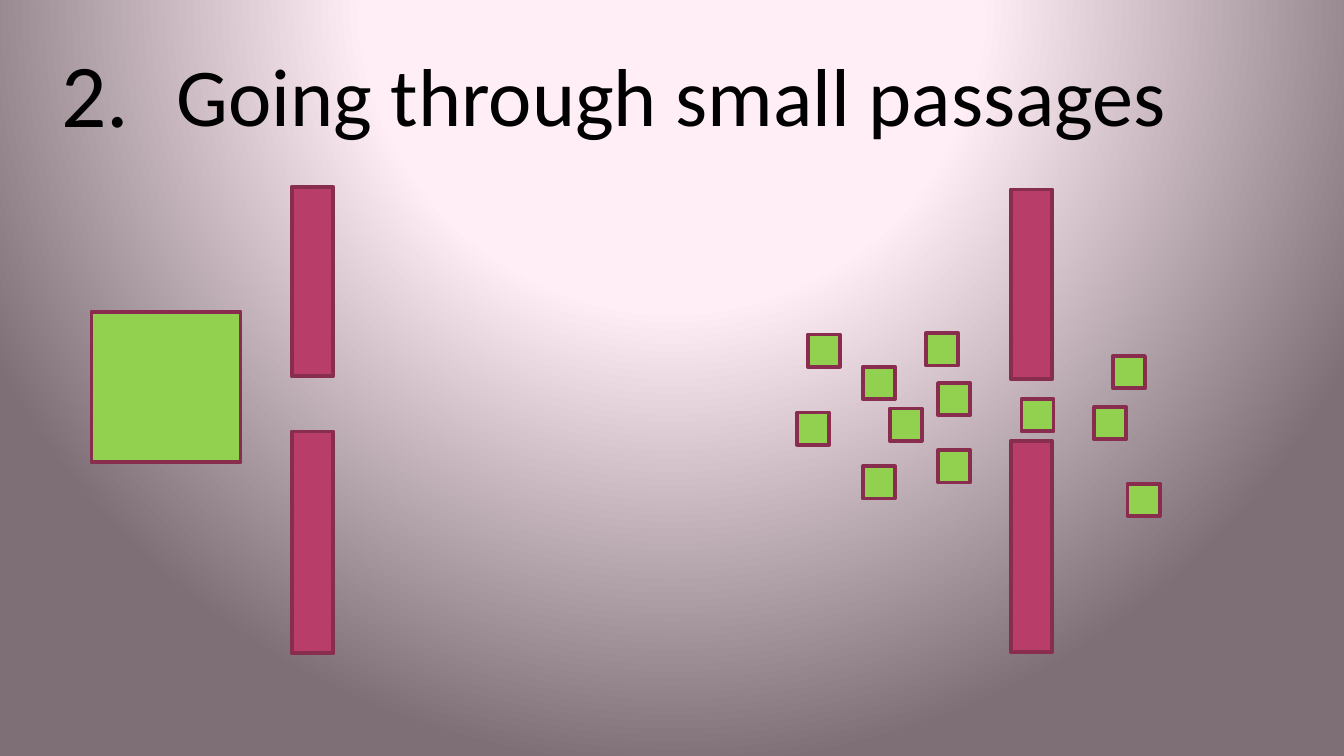
from lxml import etree
from pptx import Presentation
from pptx.dml.color import RGBColor as RGB
from pptx.enum.shapes import MSO_SHAPE as SHAPE
from pptx.enum.text import MSO_ANCHOR as ANCHOR, PP_ALIGN as ALIGN
from pptx.oxml import parse_xml
from pptx.oxml.ns import nsdecls, qn
from pptx.util import Inches, Pt

THEME = {
    "font": "Calibri",
    "title_size": Pt(44),
    "number_size": Pt(48),
    "ink": RGB.from_string("000000"),
    "wall": RGB.from_string("B83D68"),
    "particle": RGB.from_string("92D050"),
    "outline": RGB.from_string("882D4D"),
    "outline_width": Pt(2),
    "glow": [(0, "FFF1F8"), (40, "FFEEF6"), (100, "7E6E75")],
}

deck = Presentation()
deck.slide_width = Inches(10)
deck.slide_height = deck.slide_width * 9 // 16
UNIT = deck.slide_width / 100  # square grid, 100 columns across the slide
slide = deck.slides.add_slide(deck.slide_layouts[5])


def add_block(col, row, cols, rows, color):
    block = slide.shapes.add_shape(
        SHAPE.RECTANGLE, *(round(n * UNIT) for n in (col, row, cols, rows)))
    block.shadow.inherit = False
    block.fill.solid()
    block.fill.fore_color.rgb = color
    block.line.color.rgb = THEME["outline"]
    block.line.width = THEME["outline_width"]


def write_heading(holder, text, place, size, align):
    for side, cells in zip(("left", "top", "width", "height"), place):
        setattr(holder, side, round(cells * UNIT))
    frame = holder.text_frame
    frame.word_wrap = True
    frame.text = text
    line = frame.paragraphs[0]
    line.alignment = align
    look = {"name": THEME["font"], "size": size, "bold": False}
    for key, value in look.items():
        setattr(line.runs[0].font, key, value)
    line.runs[0].font.color.rgb = THEME["ink"]


# Background: a circular glow centred above the slide
slide.background.fill.gradient()
gradient = slide.element.find(".//" + qn("a:gradFill"))
for part in list(gradient):
    gradient.remove(part)
stops = etree.SubElement(gradient, qn("a:gsLst"))
for share, color in THEME["glow"]:
    stop = etree.SubElement(stops, qn("a:gs"), pos=str(share * 1000))
    etree.SubElement(stop, qn("a:srgbClr"), val=color)
gradient.append(parse_xml(
    f'<a:path {nsdecls("a")} path="circle">'
    '<a:fillToRect l="50000" t="-80000" r="50000" b="180000"/></a:path>'))

# Heading
write_heading(slide.shapes.title, "Going through small passages",
              (5, 2.3, 90, 9.4), THEME["title_size"], ALIGN.CENTER)
slide.shapes.title.text_frame.vertical_anchor = ANCHOR.MIDDLE

# Right: small particles pass through the gap
WALL_COLS = 3.1
for row, rows in [(14.1, 14.1), (32.8, 15.7)]:
    add_block(75.2, row, WALL_COLS, rows, THEME["wall"])

PARTICLE = 2.4
waiting = [(64.2, 27.3), (66.2, 30.4), (69.8, 28.5), (69.8, 33.5),
           (59.3, 30.7), (64.2, 34.7), (60.1, 24.9), (68.9, 24.8)]
passed = [(81.4, 30.3), (82.8, 26.5), (83.9, 36)]
in_gap = [(76, 29.7)]
for col, row in waiting + passed + in_gap:
    add_block(col, row, PARTICLE, PARTICLE, THEME["particle"])

# Left: one large particle is blocked
for row, rows in [(13.9, 14.1), (32.1, 16.5)]:
    add_block(21.7, row, WALL_COLS, rows, THEME["wall"])
add_block(6.8, 23.2, 11.1, 11.2, THEME["particle"])

write_heading(slide.shapes.add_textbox(0, 0, 0, 0), "2.",
              (3.6, 2.3, 8.7, 9.1), THEME["number_size"], ALIGN.LEFT)

deck.save("out.pptx")
